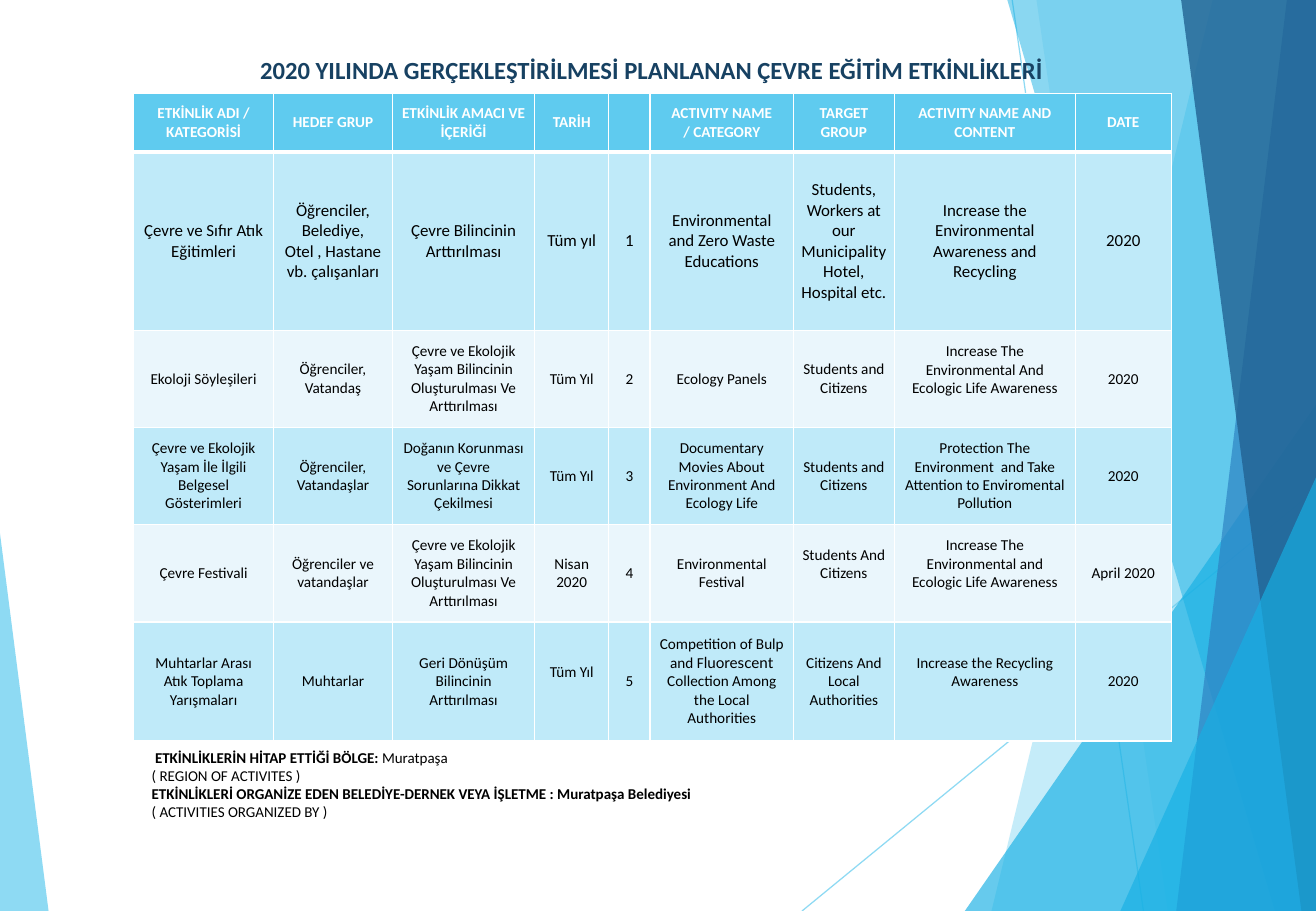
from lxml.etree import SubElement
from pptx import Presentation
from pptx.dml.color import RGBColor
from pptx.enum.shapes import MSO_CONNECTOR as CONN, MSO_SHAPE as SHAPE
from pptx.enum.text import MSO_ANCHOR as ANCHOR, PP_ALIGN as ALIGN
from pptx.oxml.ns import qn
from pptx.util import Pt

PX = 9144  # 100 px to the inch
SKY, CYAN, BLUE, NAVY = "5FCBEF", "17B0E4", "2E83C3", "226292"
WHITE, BLACK = "FFFFFF", "000000"


def rgb(value):
    return RGBColor.from_string(value)


def write(p, text, size, color=BLACK, bold=False, font="Calibri", align=ALIGN.CENTER):
    """Add one formatted run to paragraph p."""
    p.alignment = align
    r = p.add_run()
    r.text = text
    r.font.size, r.font.bold, r.font.name = Pt(size), bold, font
    r.font.color.rgb = rgb(color)


prs = Presentation()
prs.slide_width, prs.slide_height = 1083 * PX, 750 * PX
s = prs.slides.add_slide(prs.slide_layouts[5])

# Background facets
for x1, y1, x2, y2 in [(833, 0, 941, 750), (1083, 403, 660, 750)]:
    line = s.shapes.add_connector(CONN.STRAIGHT, x1 * PX, y1 * PX, x2 * PX, y2 * PX)
    line.line.width = Pt(0.75)
    line.line.color.rgb = rgb(SKY)
    for clr in line.element.iter(qn("a:srgbClr")):
        SubElement(clr, qn("a:alpha"), val="70000")
    SubElement(line.element.spPr, qn("a:effectLst"))

# Bands reach the right edge: top-left x, bottom-left x, colour, opacity.
# Triangles: left, top, width, apex position, colour, opacity.
facets = [
    (998, 816, SKY, 36),
    (853, 961, SKY, 20),
    (794, 333, 289, 1, CYAN, 66),
    (829, 1049, CYAN, 50),
    (1059, 968, BLUE, 70),
    (972, 1071, NAVY, 80),
    (922, 393, 161, 1, CYAN, 66),
    (0, 439, 40, 0, SKY, 70),
]
for *geometry, color, opacity in facets:
    if len(geometry) == 2:
        top, bottom = geometry
        outline = s.shapes.build_freeform(top, 0, scale=PX)
        outline.add_line_segments([(1083, 0), (1083, 750), (bottom, 750)])
        sp = outline.convert_to_shape()
    else:
        x, y, w, apex = geometry
        sp = s.shapes.add_shape(SHAPE.ISOSCELES_TRIANGLE, x * PX, y * PX, w * PX, (750 - y) * PX)
        sp.adjustments[0] = apex
    sp.shadow.inherit = False
    sp.line.fill.background()
    sp.fill.solid()
    sp.fill.fore_color.rgb = rgb(color)
    for clr in sp.element.spPr.iter(qn("a:srgbClr")):
        SubElement(clr, qn("a:alpha"), val=str(opacity * 1000))

# Title, brought in front of the facets
title = s.shapes.title
s.shapes.element.append(title.element)
title.left, title.top, title.width, title.height = 165 * PX, 38 * PX, 743 * PX, 39 * PX
title.text_frame.vertical_anchor = ANCHOR.MIDDLE
write(title.text_frame.paragraphs[0],
      "2020 YILINDA GERÇEKLEŞTİRİLMESİ PLANLANAN ÇEVRE EĞİTİM ETKİNLİKLERİ",
      14.6, "174162", bold=True)

# Activity table; text between bars is set in Lato
rows = [
    ["ETKİNLİK ADI / KATEGORİSİ", "HEDEF GRUP", "ETKİNLİK AMACI VE İÇERİĞİ", "TARİH", "",
     "ACTIVITY NAME\n/ CATEGORY", "TARGET GROUP", "ACTIVITY NAME AND CONTENT", "DATE"],
    ["Çevre ve Sıfır Atık Eğitimleri", "Öğrenciler, Belediye, Otel , Hastane vb. çalışanları",
     "Çevre Bilincinin Arttırılması", "Tüm yıl", "1",
     "Environmental and Zero Waste\nEducations",
     "Students, Workers at our Municipality\vHotel, Hospital etc.",
     "Increase the Environmental Awareness and Recycling", "2020"],
    ["Ekoloji Söyleşileri", "Öğrenciler, Vatandaş",
     "Çevre ve Ekolojik Yaşam Bilincinin Oluşturulması Ve Arttırılması", "Tüm Yıl", "2",
     "Ecology Panels", "Students and Citizens",
     "Increase The Environmental And Ecologic Life Awareness", "2020"],
    ["Çevre ve Ekolojik Yaşam İle İlgili Belgesel Gösterimleri", "Öğrenciler, Vatandaşlar",
     "Doğanın Korunması ve Çevre Sorunlarına Dikkat Çekilmesi", "Tüm Yıl", "3",
     "Documentary Movies About Environment And Ecology Life", "Students and Citizens",
     "Protection The Environment  and Take Attention to Enviromental Pollution", "2020"],
    ["Çevre Festivali", "Öğrenciler ve vatandaşlar",
     "Çevre ve Ekolojik Yaşam Bilincinin Oluşturulması Ve Arttırılması", "Nisan 2020", "4",
     "Environmental\nFestival", "Students And Citizens",
     "Increase The Environmental and Ecologic Life Awareness", "April 2020"],
    ["Muhtarlar Arası Atık Toplama Yarışmaları", "Muhtarlar",
     "Geri Dönüşüm Bilincinin Arttırılması", "Tüm Yıl", "5",
     "Competition of Bulp and F|luorescent |Collection Among the Local Authorities",
     "Citizens And Local Authorities", "Increase the Recycling Awareness", "2020"],
]
col_widths = [115, 98, 117, 61, 34, 118, 83, 149, 79]
row_heights = [48, 147, 80, 80, 80, 98]
raised = {(2, 7), (4, 6), (4, 7), (5, 3), (5, 7)}  # cells set half a line higher

table = s.shapes.add_table(len(rows), len(col_widths), 110 * PX, 77 * PX,
                           sum(col_widths) * PX, sum(row_heights) * PX).table
for col, width in zip(table.columns, col_widths):
    col.width = width * PX
for row, height in zip(table.rows, row_heights):
    row.height = height * PX

for i, row in enumerate(rows):
    fill = SKY if i == 0 else "BFEAF9" if i % 2 else "EAF6FC"
    style = {"size": 10 if i == 1 else 9, "color": BLACK if i else WHITE, "bold": i == 0}
    for j, text in enumerate(row):
        cell = table.cell(i, j)
        cell.vertical_anchor = ANCHOR.MIDDLE
        cell.margin_left = cell.margin_right = (6 if j == 6 else 7) * PX
        cell.margin_top = 4 * PX
        cell.margin_bottom = (19 if (i, j) in raised else 4) * PX
        for side in "LRTB":
            thick = (i, side) in [(0, "B"), (1, "T")]
            ln = SubElement(cell._tc.get_or_add_tcPr(), qn("a:ln" + side),
                            w=str(Pt(3 if thick else 1)))
            SubElement(SubElement(ln, qn("a:solidFill")), qn("a:srgbClr"), val=WHITE)
        cell.fill.solid()
        cell.fill.fore_color.rgb = rgb(fill)
        tf = cell.text_frame
        for k, part in enumerate(text.split("\n") if text else []):
            p = tf.add_paragraph() if k else tf.paragraphs[0]
            for n, piece in enumerate(part.split("|")):
                if "\v" in piece:
                    before, piece = piece.split("\v")
                    write(p, before, **style)
                    p.add_line_break()
                write(p, piece, font="Lato" if n % 2 else "Calibri", **style)

# Region and organiser
notes = [
    [(" ETKİNLİKLERİN HİTAP ETTİĞİ BÖLGE: ", True), ("Muratpaşa", False)],
    [("( REGION OF ACTIVITES )", False)],
    [("ETKİNLİKLERİ ORGANİZE EDEN BELEDİYE-DERNEK VEYA İŞLETME : Muratpaşa Belediyesi", True)],
    [("( ACTIVITIES ORGANIZED BY )", False)],
]
tf = s.shapes.add_textbox(115 * PX, 611 * PX, 793 * PX, 70 * PX).text_frame
tf.word_wrap = True
for k, runs in enumerate(notes):
    p = tf.add_paragraph() if k else tf.paragraphs[0]
    for text, bold in runs:
        write(p, text, 8.9, bold=bold, align=ALIGN.LEFT)

prs.save("out.pptx")
